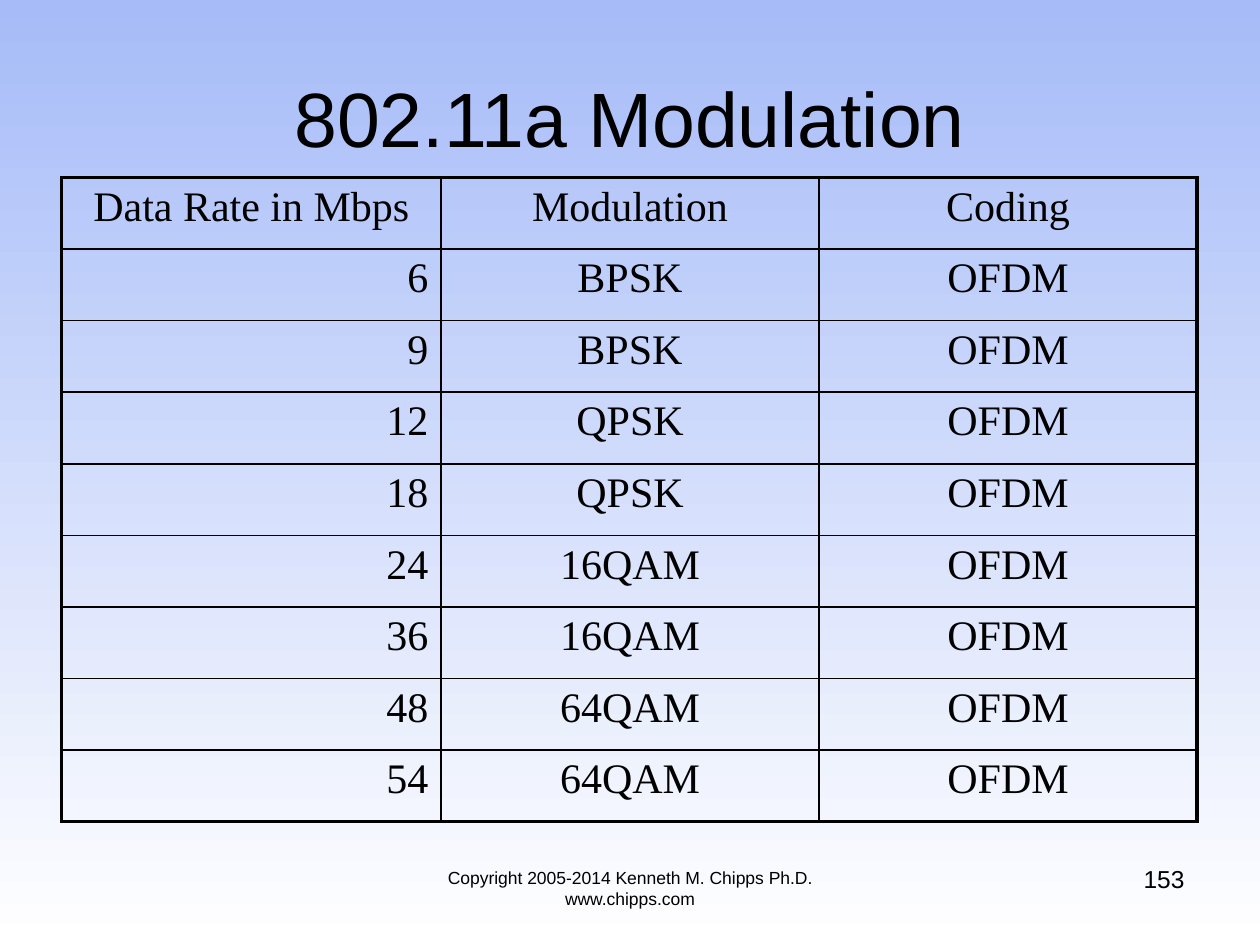
from lxml.etree import SubElement
from pptx import Presentation
from pptx.dml.color import RGBColor
from pptx.enum.text import MSO_ANCHOR, PP_ALIGN
from pptx.oxml.ns import qn
from pptx.util import Inches, Pt

BLACK = RGBColor(0x00, 0x00, 0x00)
SKY = RGBColor(0xA6, 0xBB, 0xF8)
WHITE = RGBColor(0xFF, 0xFF, 0xFF)
THIN, THICK = Pt(1), Pt(2.25)

HEADINGS = ("Data Rate in Mbps", "Modulation", "Coding")
RATES = (
    ("6", "BPSK"),
    ("9", "BPSK"),
    ("12", "QPSK"),
    ("18", "QPSK"),
    ("24", "16QAM"),
    ("36", "16QAM"),
    ("48", "64QAM"),
    ("54", "64QAM"),
)


def write_text(frame, text, font="Arial", size=14, align=PP_ALIGN.CENTER,
               anchor=MSO_ANCHOR.TOP):
    frame.word_wrap = True
    frame.vertical_anchor = anchor
    paragraph = frame.paragraphs[0]
    paragraph.alignment = align
    run = paragraph.add_run()
    run.text = text
    run.font.name = font
    run.font.size = Pt(size)
    run.font.color.rgb = BLACK
    return paragraph


def set_background(slide):
    fill = slide.background.fill
    fill.gradient()
    fill.gradient_angle = 270
    for stop, color in zip(fill.gradient_stops, (SKY, WHITE)):
        stop.color.rgb = color


def add_title(slide, text):
    title = slide.shapes.title
    title.left, title.top = Inches(0.5), Inches(0.3)
    title.width, title.height = Inches(9), Inches(1.25)
    write_text(title.text_frame, text, size=44, anchor=MSO_ANCHOR.MIDDLE)


def add_text_box(slide, left, top, width, height, text, **text_format):
    box = slide.shapes.add_textbox(
        Inches(left), Inches(top), Inches(width), Inches(height))
    write_text(box.text_frame, text, **text_format)


def set_borders(cell, widths):
    properties = cell._tc.get_or_add_tcPr()
    for side, width in widths.items():
        line = SubElement(properties, qn(f"a:ln{side}"), w=str(width))
        fill = SubElement(line, qn("a:solidFill"))
        SubElement(fill, qn("a:srgbClr"), val=str(BLACK))


def space_before(paragraph, percent):
    spacing = SubElement(paragraph._p.get_or_add_pPr(), qn("a:spcBef"))
    SubElement(spacing, qn("a:spcPct"), val=str(percent * 1000))


def add_rate_table(slide):
    rows = [HEADINGS] + [(*rate, "OFDM") for rate in RATES]
    last_row, last_column = len(rows) - 1, len(HEADINGS) - 1
    table = slide.shapes.add_table(
        len(rows), len(HEADINGS),
        Inches(0.49), Inches(1.41), Inches(9.01), Inches(5.11)).table
    table.first_row = False
    table.horz_banding = False
    for column, width in zip(table.columns, (3.01, 3, 3)):
        column.width = Inches(width)
    for row_index, row in enumerate(rows):
        for column_index, text in enumerate(row):
            cell = table.cell(row_index, column_index)
            is_rate = row_index > 0 and column_index == 0
            paragraph = write_text(
                cell.text_frame, text, font="Times New Roman", size=24,
                align=PP_ALIGN.RIGHT if is_rate else PP_ALIGN.CENTER)
            space_before(paragraph, 20)
            set_borders(cell, {
                "L": THICK if column_index == 0 else THIN,
                "R": THICK if column_index == last_column else THIN,
                "T": THICK if row_index == 0 else THIN,
                "B": THICK if row_index == last_row else THIN,
            })
            cell.fill.background()


def main():
    presentation = Presentation()
    presentation.slide_width = Inches(10)
    presentation.slide_height = Inches(7.5)
    slide = presentation.slides.add_slide(presentation.slide_layouts[5])
    set_background(slide)
    add_title(slide, "802.11a Modulation")
    add_rate_table(slide)
    add_text_box(slide, 7.17, 6.81, 2.33, 0.52, "153", align=PP_ALIGN.RIGHT)
    add_text_box(slide, 3, 6.83, 4, 0.52,
                 "Copyright 2005-2014 Kenneth M. Chipps Ph.D. www.chipps.com",
                 size=10)
    presentation.save("out.pptx")


if __name__ == "__main__":
    main()
